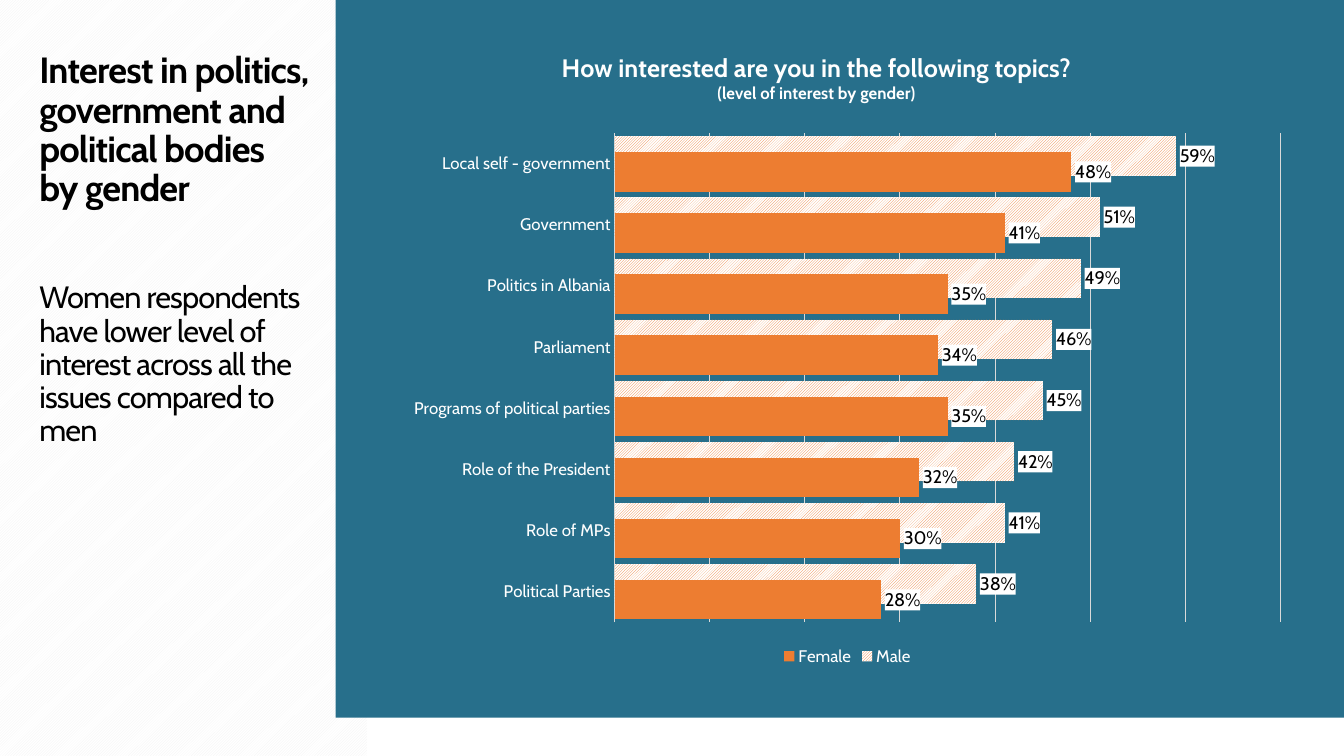
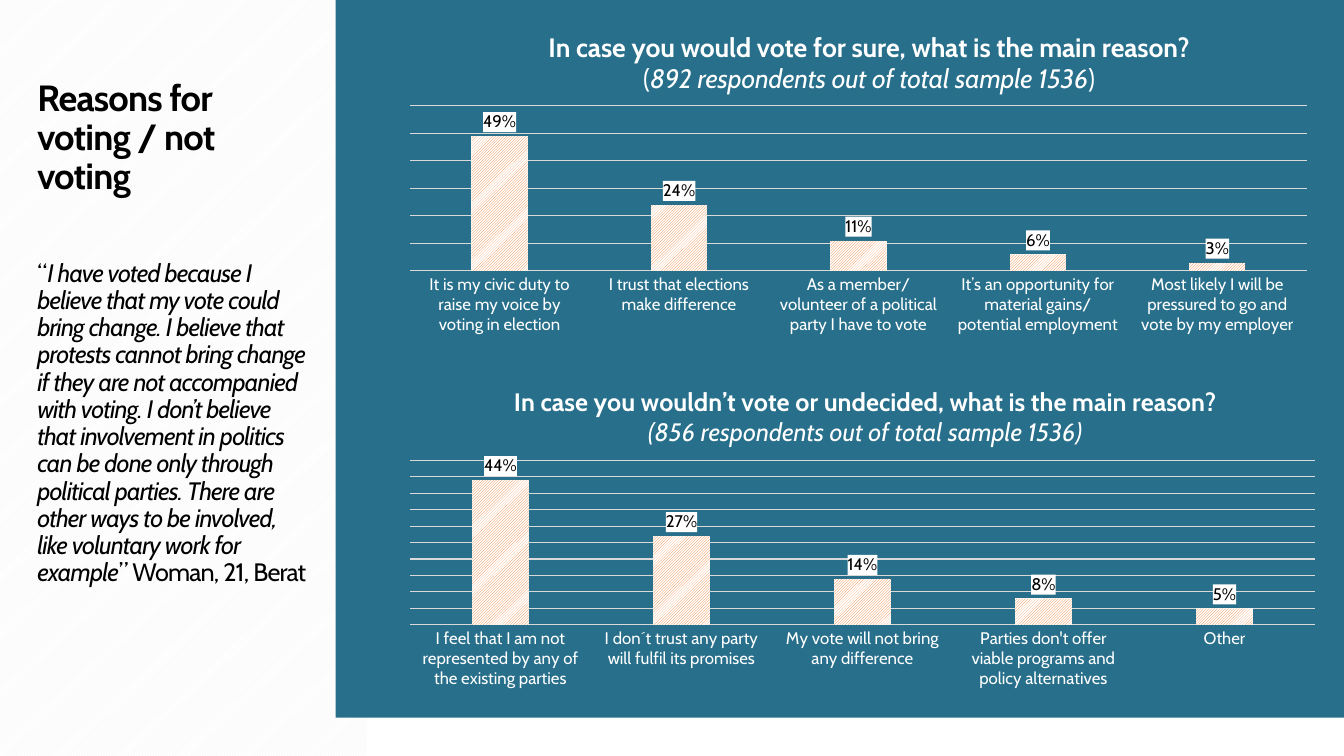
from lxml import etree
from pptx import Presentation
from pptx.chart.data import CategoryChartData
from pptx.dml.color import RGBColor
from pptx.enum.chart import XL_CHART_TYPE as ChartType
from pptx.enum.chart import XL_LABEL_POSITION as LabelPosition
from pptx.enum.chart import XL_LEGEND_POSITION as LegendPosition
from pptx.enum.chart import XL_TICK_MARK as TickMark
from pptx.enum.dml import MSO_PATTERN as Pattern
from pptx.enum.shapes import MSO_SHAPE as Shape
from pptx.enum.text import MSO_ANCHOR as Anchor
from pptx.enum.text import MSO_AUTO_SIZE as AutoSize
from pptx.enum.text import PP_ALIGN as Align
from pptx.oxml import parse_xml
from pptx.oxml.ns import nsdecls, qn
from pptx.util import Inches, Pt

FONT = "Cabin"
BLACK, WHITE, STRIPE = "000000", "FFFFFF", "F2F2F2"
PANEL, ORANGE, GRID = "276F8B", "ED7D31", "D9D9D9"
WIDTH, HEIGHT = 13.33, 7.5


def color(value):
    return RGBColor.from_string(value)


def inches(box):
    return [Inches(length) for length in box]


def set_font(font, size, value):
    font.name, font.size = FONT, Pt(size)
    font.color.rgb = color(value)


def fill_solid(fill, value):
    fill.solid()
    fill.fore_color.rgb = color(value)


def fill_pattern(fill, pattern, front):
    fill.patterned()
    fill.pattern = pattern
    fill.fore_color.rgb = color(front)
    fill.back_color.rgb = color(WHITE)


def write_runs(paragraph, runs, value, spacing=None):
    """Each run is (text, size, style); the style holds b for bold, i for italic."""
    for text, size, style in runs:
        run = paragraph.add_run()
        run.text = text
        set_font(run.font, size, value)
        run.font.bold, run.font.italic = "b" in style, "i" in style
        if spacing is not None:
            run._r.get_or_add_rPr().set("spc", str(spacing))


# Shared background: striped side band and chart panel, kept on the layout
def add_background(slide, layout):
    band = slide.shapes.add_shape(Shape.RECTANGLE, *inches((0, 0, 3.64, HEIGHT)))
    fill_pattern(band.fill, Pattern.DARK_UPWARD_DIAGONAL, STRIPE)
    panel = slide.shapes.add_shape(Shape.RECTANGLE, *inches((3.33, 0, WIDTH - 3.33, 7.12)))
    fill_solid(panel.fill, PANEL)
    for index, shape in enumerate((band, panel)):
        shape.shadow.inherit = False
        shape.line.fill.background()
        layout.shapes.element.insert(2 + index, shape.element)


# Side text: heading and comment share the title placeholder
def add_side_text(slide, box, paragraphs):
    title = slide.shapes.title
    title.left, title.top, title.width, title.height = inches(box)
    frame = title.text_frame
    frame.word_wrap, frame.auto_size = True, AutoSize.NONE
    frame.vertical_anchor = Anchor.TOP
    for index, (space_before, runs) in enumerate(paragraphs):
        paragraph = frame.add_paragraph() if index else frame.paragraphs[0]
        paragraph.alignment = Align.LEFT
        paragraph.line_spacing = 0.9
        paragraph.space_before = Pt(space_before)
        write_runs(paragraph, runs, BLACK, spacing=-60)


def place_in_chart(element, index, **shares):
    """Set a manual layout, given as shares of the chart's size."""
    for old in element.findall(qn("c:layout")):
        element.remove(old)
    layout = parse_xml(f"<c:layout {nsdecls('c')}><c:manualLayout/></c:layout>")
    settings = {"xMode": "edge", "yMode": "edge", **shares}
    if "w" in shares:
        settings = {"layoutTarget": "inner", **settings}
    for name, value in settings.items():
        etree.SubElement(layout[0], qn(f"c:{name}")).set("val", str(value))
    element.insert(index, layout)


def style_axes(chart, top, step):
    categories, values = chart.category_axis, chart.value_axis
    categories.major_tick_mark = categories.minor_tick_mark = TickMark.NONE
    set_font(categories.tick_labels.font, 12, WHITE)
    values.visible = False
    values.minimum_scale, values.maximum_scale, values.major_unit = 0, top, step
    values.has_major_gridlines = True
    for line in (categories.format.line, values.major_gridlines.format.line):
        line.color.rgb = color(GRID)
        line.width = Pt(0.75)


def style_series(series, striped, label_size):
    if striped:
        fill_pattern(series.format.fill, Pattern.LIGHT_UPWARD_DIAGONAL, ORANGE)
    else:
        fill_solid(series.format.fill, ORANGE)
    labels = series.data_labels
    labels.show_value = True
    labels.number_format, labels.number_format_is_linked = "0%", False
    labels.position = LabelPosition.OUTSIDE_END
    set_font(labels.font, label_size, BLACK)
    # White box behind each value
    number_format = series._element.find(qn("c:dLbls")).find(qn("c:numFmt"))
    number_format.addnext(parse_xml(
        f"<c:spPr {nsdecls('c', 'a')}><a:solidFill>"
        f'<a:srgbClr val="{WHITE}"/></a:solidFill></c:spPr>'))


def add_bar_chart(slide, box, kind, categories, series, title, title_at, plot_at,
                  top, step, gap, overlap, label_size=12):
    data = CategoryChartData(number_format="0%")
    data.categories = categories
    for name, values in series.items():
        data.add_series(name, values)
    chart = slide.shapes.add_chart(kind, *inches(box), data).chart
    set_font(chart.font, 10, WHITE)
    chart.has_legend = False
    style_axes(chart, top, step)
    plot = chart.plots[0]
    plot.vary_by_categories = False
    plot.gap_width, plot.overlap = gap, overlap
    for index, item in enumerate(plot.series):
        style_series(item, index == 0, label_size)
    # Title lines
    chart.has_title = True
    frame = chart.chart_title.text_frame
    for index, runs in enumerate(title):
        paragraph = frame.add_paragraph() if index else frame.paragraphs[0]
        paragraph.alignment = Align.CENTER
        write_runs(paragraph, runs, WHITE)
    chart.chart_title.include_in_layout = False
    place_in_chart(chart.element.find(".//" + qn("c:title")), 1, **title_at)
    place_in_chart(chart.element.find(".//" + qn("c:plotArea")), 0, **plot_at)
    return chart


def build_interest_slide(slide):
    add_side_text(slide, (0.29, 0.47, 2.91, 5.79), [
        (0, [("Interest in politics, government and political bodies", 26, "b")]),
        (0, [("by gender", 26, "b")]),
        (52, [("Women respondents have lower level of interest across all the "
               "issues compared to men", 22, "")]),
    ])
    chart = add_bar_chart(
        slide, (3.93, 0.42, 8.95, 6.23), ChartType.BAR_CLUSTERED,
        ["Local self - government", "Government", "Politics in Albania", "Parliament",
         "Programs of political parties", "Role of the President", "Role of MPs",
         "Political Parties"],
        {"Male": [0.59, 0.51, 0.49, 0.46, 0.45, 0.42, 0.41, 0.38],
         "Female": [0.48, 0.41, 0.35, 0.34, 0.35, 0.32, 0.3, 0.28]},
        [[("How interested are you in the following topics?", 18, "b")],
         [("(level of interest by gender)", 12, "b")]],
        dict(x=0.18, y=0.01), dict(x=0.242, y=0.145, w=0.738, h=0.779),
        top=0.7, step=0.1, gap=15, overlap=60, label_size=13)
    chart.category_axis.reverse_order = True
    chart.has_legend = True
    chart.legend.position = LegendPosition.BOTTOM
    chart.legend.include_in_layout = False
    set_font(chart.legend.font, 12, WHITE)


def build_reasons_slide(slide):
    add_side_text(slide, (0.27, 0.74, 2.9, 5.35), [
        (0, [("Reasons for voting / not voting", 26, "b")]),
        (45, [("“", 18, ""),
              ("I have voted because I believe that my vote could bring change. I believe "
               "that protests cannot bring change if they are not accompanied with voting. "
               "I don’t believe that involvement in politics can be done only through "
               "political parties. There are other ways to be involved, like voluntary "
               "work for example", 18, "i"),
              ("” Woman, 21, Berat", 18, "")]),
    ])
    shared = dict(kind=ChartType.COLUMN_CLUSTERED, gap=219, overlap=-27,
                  plot_at=dict(x=0.02, y=0.28, w=0.96, h=0.504))
    # Reasons for voting
    add_bar_chart(
        slide, (3.88, 0.14, 9.27, 3.25),
        categories=["It is my civic duty to raise my voice by voting in election",
                    "I trust that elections make difference",
                    "As a member/volunteer of a political party I have to vote",
                    "It’s an opportunity for material gains/potential employment",
                    "Most likely I will be pressured to go and vote by my employer"],
        series={"Series 1": [0.49, 0.24, 0.11, 0.06, 0.03]},
        title=[[("In case you would vote for sure, what is the main reason?", 19, "b")],
               [("(", 19, ""), ("892 respondents out of total sample 1536", 19, "i"),
                (")", 19, "")]],
        title_at=dict(x=0.165, y=0.04), top=0.6, step=0.1, **shared)
    # Reasons for not voting
    add_bar_chart(
        slide, (3.88, 3.66, 9.35, 3.24),
        categories=["I feel that I am not represented by any of the existing parties",
                    "I don´t trust any party will fulfil its promises",
                    "My vote will not bring any difference",
                    "Parties don't offer viable programs and policy alternatives",
                    "Other"],
        series={"Series 1": [0.44, 0.27, 0.14, 0.08, 0.05]},
        title=[[("In case you wouldn’t vote or undecided, what is the main reason?", 18, "b")],
               [("(856 respondents out of total sample 1536)", 18, "i")]],
        title_at=dict(x=0.127, y=0.04), top=0.5, step=0.05, **shared)


def main():
    presentation = Presentation()
    presentation.slide_width, presentation.slide_height = Inches(WIDTH), Inches(HEIGHT)
    layout = presentation.slide_layouts.get_by_name("Title Only")
    builders = (build_interest_slide, build_reasons_slide)
    slides = [presentation.slides.add_slide(layout) for _ in builders]
    add_background(slides[0], layout)
    for build, slide in zip(builders, slides):
        build(slide)
    presentation.save("out.pptx")


if __name__ == "__main__":
    main()
